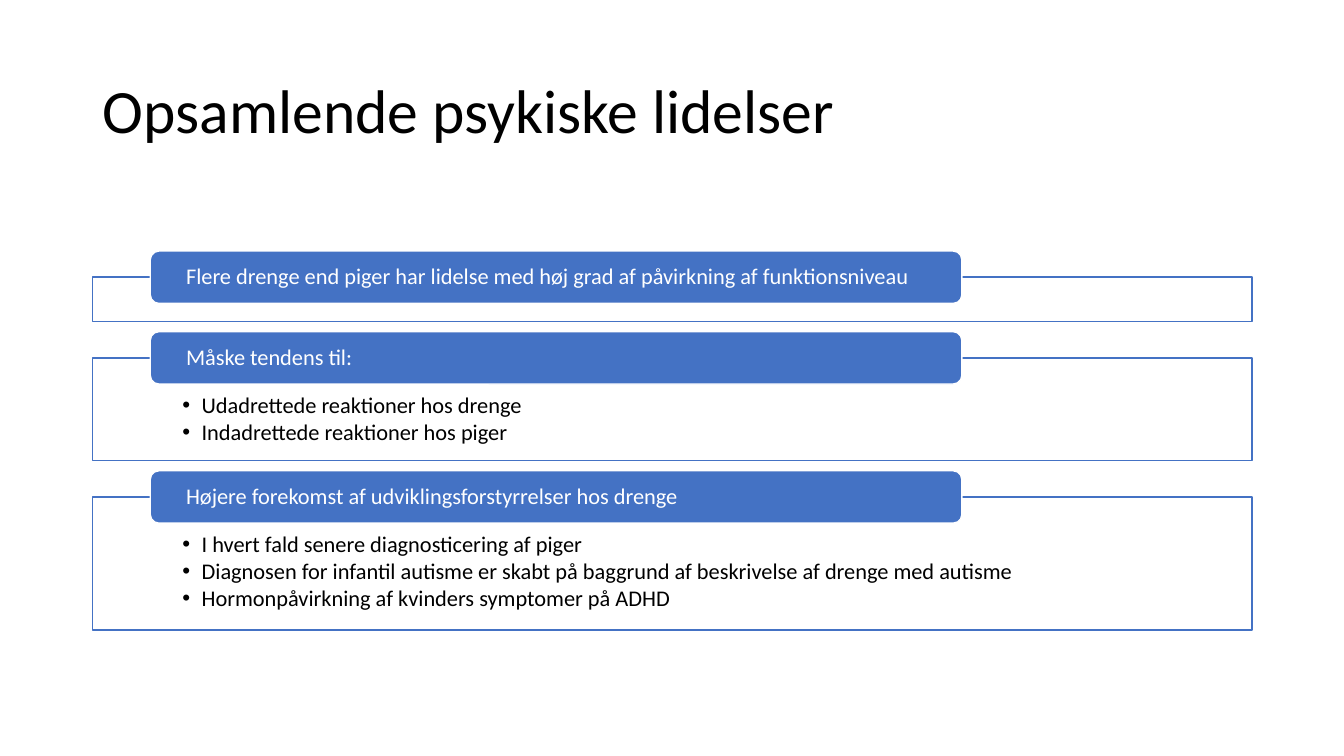
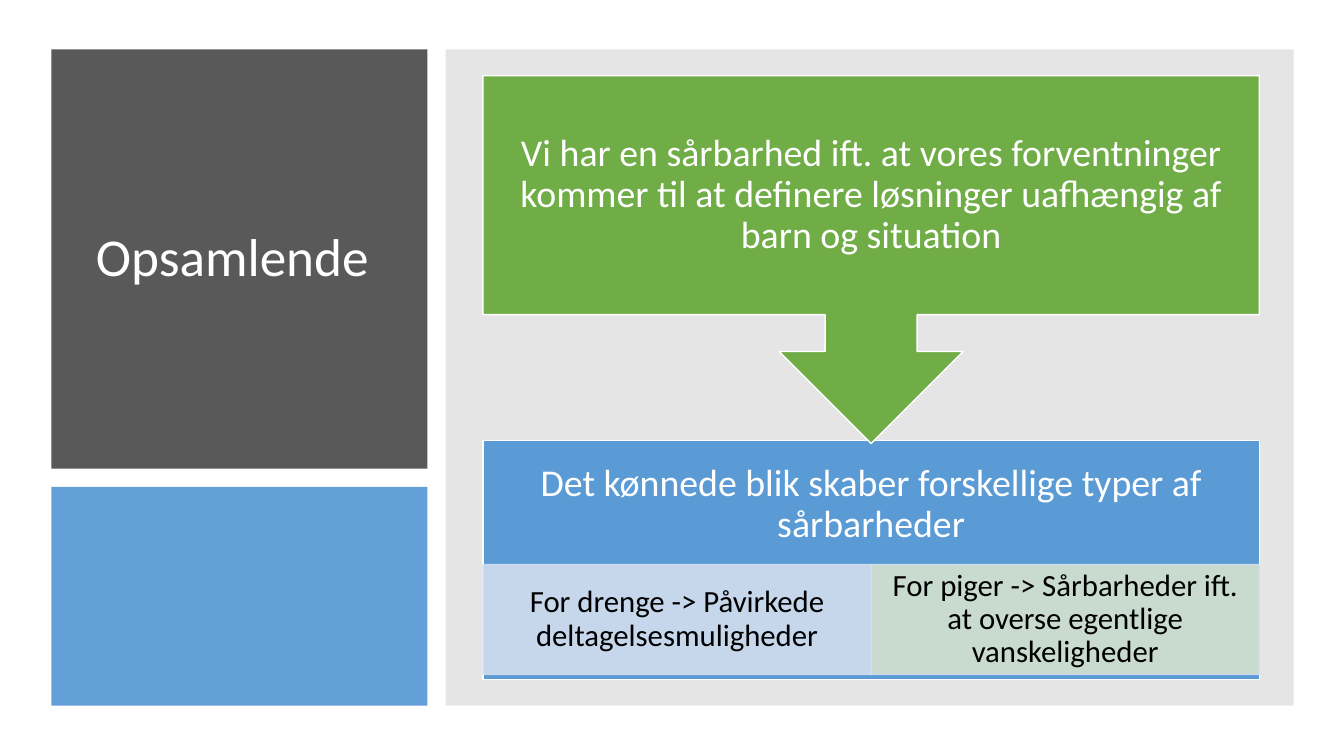
from lxml.etree import SubElement
from pptx import Presentation
from pptx.dml.color import RGBColor
from pptx.enum.shapes import MSO_SHAPE
from pptx.enum.text import MSO_ANCHOR, MSO_AUTO_SIZE, PP_ALIGN
from pptx.oxml.ns import qn
from pptx.util import Inches, Pt

FONT = "Calibri"
BLACK = RGBColor(0x00, 0x00, 0x00)
WHITE = RGBColor(0xFF, 0xFF, 0xFF)
BLUE = RGBColor(0x44, 0x72, 0xC4)
SKY = RGBColor(0x5B, 0x9B, 0xD5)
GREEN = RGBColor(0x70, 0xAD, 0x47)
PALE_BLUE = RGBColor(0xD2, 0xDE, 0xEF)
PALE_GREEN = RGBColor(0xD5, 0xE3, 0xCF)
DARK_GREY = RGBColor(0x59, 0x59, 0x59)
GREY = RGBColor(0x80, 0x80, 0x80)

FRAME_GAP = 0.36
HEADER_OVERLAP = 0.26
# Header, bullets and frame height
SECTIONS = [
    ("Flere drenge end piger har lidelse med høj grad af påvirkning af funktionsniveau", [], 0.44),
    ("Måske tendens til:",
     ["Udadrettede reaktioner hos drenge", "Indadrettede reaktioner hos piger"], 1.02),
    ("Højere forekomst af udviklingsforstyrrelser hos drenge",
     ["I hvert fald senere diagnosticering af piger",
      "Diagnosen for infantil autisme er skabt på baggrund af beskrivelse af drenge med autisme",
      "Hormonpåvirkning af kvinders symptomer på ADHD"], 1.32),
]
CONSEQUENCES = [
    ("For drenge -> Påvirkede deltagelsesmuligheder", PALE_BLUE),
    ("For piger -> Sårbarheder ift. at overse egentlige vanskeligheder", PALE_GREEN),
]


def add_box(slide, left, top, width, height, fill, line=None,
            kind=MSO_SHAPE.RECTANGLE, opacity=100):
    box = slide.shapes.add_shape(kind, Inches(left), Inches(top), Inches(width), Inches(height))
    box.shadow.inherit = False
    box.fill.solid()
    box.fill.fore_color.rgb = fill
    if line is None:
        box.line.fill.background()
    else:
        box.line.color.rgb = line
        box.line.width = Pt(1)
    if opacity < 100:
        for color in box.element.spPr.iter(qn("a:srgbClr")):
            SubElement(color, qn("a:alpha"), val=str(opacity * 1000))
    return box


def format_paragraph(paragraph, size, color, align):
    paragraph.font.name = FONT
    paragraph.font.size = Pt(size)
    paragraph.font.color.rgb = color
    paragraph.alignment = align
    paragraph.line_spacing = 0.9


def write(box, lines, size, color, insets, align=PP_ALIGN.CENTER, anchor=MSO_ANCHOR.MIDDLE):
    """Fill a box with paragraphs; insets are left, top, right, bottom in inches."""
    frame = box.text_frame
    frame.word_wrap = True
    frame.vertical_anchor = anchor
    (frame.margin_left, frame.margin_top,
     frame.margin_right, frame.margin_bottom) = map(Inches, insets)
    frame.text = "\n".join(lines)
    for paragraph in frame.paragraphs:
        format_paragraph(paragraph, size, color, align)


def add_bullets(box):
    for paragraph in box.text_frame.paragraphs:
        paragraph.space_after = Pt(2)
        properties = paragraph._p.get_or_add_pPr()
        properties.set("marL", str(Inches(0.19)))
        properties.set("indent", str(-Inches(0.19)))
        SubElement(properties, qn("a:buFont"), typeface="Arial")
        SubElement(properties, qn("a:buChar"), char="•")
        # Bullet elements must precede the default run properties
        properties.append(properties.find(qn("a:defRPr")))


def set_title(slide, text, left, top, width, height, size, color):
    title = slide.shapes.title
    title.left, title.top = Inches(left), Inches(top)
    title.width, title.height = Inches(width), Inches(height)
    title.text_frame.auto_size = MSO_AUTO_SIZE.NONE
    write(title, [text], size, color, (0.1, 0.05, 0.1, 0.05), PP_ALIGN.LEFT)
    return title


def add_section(slide, top, header_text, bullets, height):
    frame = add_box(slide, 0.92, top, 11.5, height, WHITE, BLUE)
    if bullets:
        write(frame, bullets, 16, BLACK, (0.89, 0.36, 0.89, 0.12), PP_ALIGN.LEFT, MSO_ANCHOR.TOP)
        add_bullets(frame)
    header = add_box(slide, 1.49, top - HEADER_OVERLAP, 8.05, 0.52, BLUE, WHITE,
                     MSO_SHAPE.ROUNDED_RECTANGLE)
    write(header, [header_text], 16, WHITE, (0.33, 0, 0.33, 0), PP_ALIGN.LEFT)


def build_disorders(slide):
    set_title(slide, "Opsamlende psykiske lidelser", 0.92, 0.4, 11.5, 1.45, 44, BLACK)
    top = 2.75
    for header_text, bullets, height in SECTIONS:
        add_section(slide, top, header_text, bullets, height)
        top += height + FRAME_GAP


def build_vulnerabilities(slide):
    title = set_title(slide, "Opsamlende", 0.85, 0.8, 3.11, 3.54, 38, WHITE)
    title_panel = add_box(slide, 0.51, 0.49, 3.73, 4.16, DARK_GREY)
    title.element.addprevious(title_panel.element)
    add_box(slide, 0.51, 4.83, 3.73, 2.17, SKY, opacity=95)
    add_box(slide, 4.42, 0.49, 8.41, 6.51, GREY, opacity=20)

    left, width = 4.79, 7.7
    gendered_view = add_box(slide, left, 4.37, width, 2.37, SKY, WHITE)
    write(gendered_view, ["Det kønnede blik skaber forskellige typer af sårbarheder"],
          27, WHITE, (0.21, 0.21, 0.21, 1.3))

    cell_width = width / len(CONSEQUENCES)
    for column, (text, fill) in enumerate(CONSEQUENCES):
        cell = add_box(slide, left + column * cell_width, 5.6, cell_width, 1.09,
                       fill, PALE_BLUE, opacity=90)
        write(cell, [text], 22, BLACK, (0.17, 0.03, 0.17, 0.03))

    expectations = add_box(slide, left, 0.75, width, 3.65, GREEN, WHITE,
                           MSO_SHAPE.DOWN_ARROW_CALLOUT)
    write(expectations,
          ["Vi har en sårbarhed ift. at vores forventninger kommer til at definere "
           "løsninger uafhængig af barn og situation"],
          27, WHITE, (0.21, 0.21, 0.21, 0.21))


def main():
    presentation = Presentation()
    presentation.slide_width = Inches(13.33)
    presentation.slide_height = Inches(7.5)
    title_only = presentation.slide_layouts[5]
    for build in (build_disorders, build_vulnerabilities):
        build(presentation.slides.add_slide(title_only))
    presentation.save("out.pptx")


if __name__ == "__main__":
    main()
